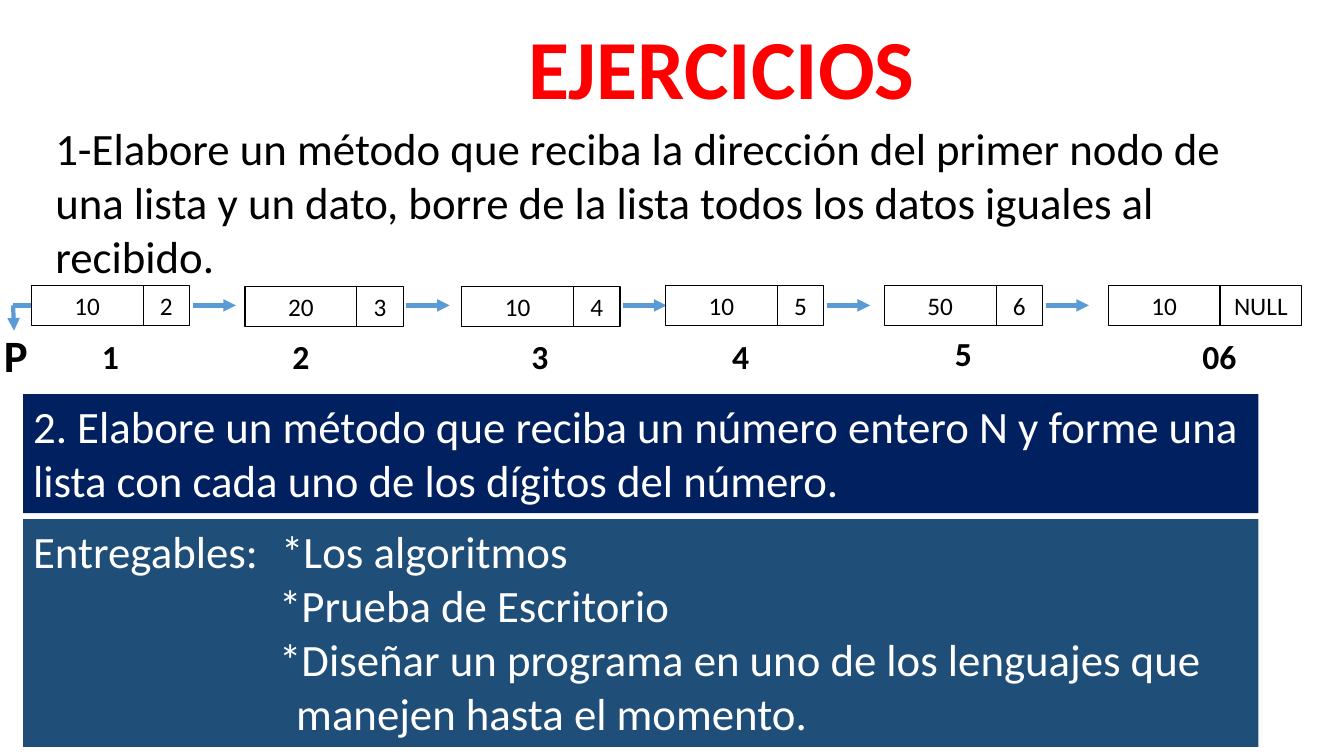
from pptx import Presentation
from pptx.dml.color import RGBColor
from pptx.enum.shapes import MSO_CONNECTOR, MSO_SHAPE
from pptx.enum.text import MSO_ANCHOR, PP_ALIGN
from pptx.oxml.ns import qn
from pptx.util import Inches, Pt
from lxml import etree

RECT, LINE = MSO_SHAPE.RECTANGLE, MSO_CONNECTOR.STRAIGHT
TOP, LEFT, MID = MSO_ANCHOR.TOP, PP_ALIGN.LEFT, PP_ALIGN.CENTER
BLACK = RGBColor(0, 0, 0)
WHITE = RGBColor(255, 255, 255)
RED = RGBColor(255, 0, 0)
NAVY = RGBColor(0x00, 0x20, 0x60)
TEAL = RGBColor(0x1F, 0x4E, 0x79)
BLUE = RGBColor(0x5B, 0x9B, 0xD5)

# Content
TITLE = "EJERCICIOS"
TASK_1 = ("1-Elabore un método que reciba la dirección del primer nodo de "
          "una lista y un dato, borre de la lista todos los datos iguales al recibido.")
TASK_2 = ("2. Elabore un método que reciba un número entero N y forme una "
          "lista con cada uno de los dígitos del número.")
# Deliverables: text and left indent
GOALS = [
    ("Entregables:\t*Los algoritmos", 0),
    ("*Prueba de Escritorio", 2.44),
    ("*Diseñar un programa en uno de los lenguajes que", 2.44),
    ("manejen hasta el momento.", 2.61),
]
TAB = 2.46
# Nodes: left, top, value, next, label, label left, label top
NODES = [
    (0.31, 2.83, "10", "2", "1", 0.74, 3.28),
    (2.43, 2.84, "20", "3", "2", 2.63, 3.28),
    (4.58, 2.84, "10", "4", "3", 5.0, 3.28),
    (6.6, 2.83, "10", "5", "4", 6.99, 3.28),
    (8.77, 2.83, "50", "6", "5", 9.2, 3.25),
    (10.99, 2.83, "10", "NULL", "06", 11.74, 3.28),
]
DATA_W, LINK_W, NULL_W, NODE_H = 1.11, 0.46, 0.81, 0.4
ROW_Y, GAP, REACH = 3.03, 0.03, 0.43

deck = Presentation()
deck.slide_width, deck.slide_height = Inches(13.33), Inches(7.5)
slide = deck.slides.add_slide(deck.slide_layouts[6])
shapes = slide.shapes


def write(shape, rows, size, color, bold=False, align=LEFT):
    frame = shape.text_frame
    frame.word_wrap = True
    frame.vertical_anchor = TOP
    for i, (text, indent) in enumerate(rows):
        para = frame.add_paragraph() if i else frame.paragraphs[0]
        para.text = text
        para.alignment = align
        props = para._p.get_or_add_pPr()
        if indent:
            props.set("marL", str(Inches(indent)))
        if "\t" in text:
            tabs = etree.SubElement(props, qn("a:tabLst"))
            etree.SubElement(tabs, qn("a:tab"), pos=str(Inches(TAB)), algn="l")
        font = para.font
        font.name, font.size, font.bold = "Calibri", Pt(size), bold
        font.color.rgb = color


def label(box, text, size, color=BLACK, bold=True, align=LEFT):
    write(shapes.add_textbox(*map(Inches, box)), [(text, 0)], size, color, bold, align)


def block(box, fill=None):
    shape = shapes.add_shape(RECT, *map(Inches, box))
    shape.shadow.inherit = False
    if fill is None:
        shape.fill.background()
        shape.line.color.rgb = BLACK
        shape.line.width = Pt(0.75)
    else:
        shape.fill.solid()
        shape.fill.fore_color.rgb = fill
        shape.line.fill.background()
    return shape


def link(x1, y1, x2, y2, head=True):
    line = shapes.add_connector(LINE, *map(Inches, (x1, y1, x2, y2)))
    line.line.color.rgb = BLUE
    line.line.width = Pt(3)
    if head:
        etree.SubElement(line.line._get_or_add_ln(), qn("a:tailEnd"), type="triangle")
    etree.SubElement(line._element.spPr, qn("a:effectLst"))


# Title and tasks
label((5.01, 0.1, 4.29, 1.11), TITLE, 60, RED, align=MID)
label((0.45, 1.15, 12.25, 1.72), TASK_1, 32, bold=False)
write(block((0.23, 3.91, 12.25, 1.18), NAVY), [(TASK_2, 0)], 32, WHITE)
write(block((0.23, 5.15, 12.25, 2.26), TEAL), GOALS, 32, WHITE)

# Linked list
for x, y, value, after, name, name_x, name_y in NODES:
    last = after == "NULL"
    wide = NULL_W if last else LINK_W
    edge = x + DATA_W
    for left, width, text in ((x, DATA_W, value), (edge, wide, after)):
        cell = block((left, y, width, NODE_H))
        cell.text_frame.margin_left = cell.text_frame.margin_right = Inches(0.05)
        write(cell, [(text, 0)], 18, BLACK, align=MID)
    if not last:
        start = edge + wide + GAP
        link(start, ROW_Y, start + REACH, ROW_Y)
    label((name_x, name_y, 0.71, 0.5), name, 24, align=MID)

# Head pointer
link(0.31, ROW_Y, 0.13, ROW_Y, head=False)
link(0.13, ROW_Y, 0.14, 3.28)
label((-0.06, 3.2, 0.77, 0.64), "P", 32)

deck.save("out.pptx")
